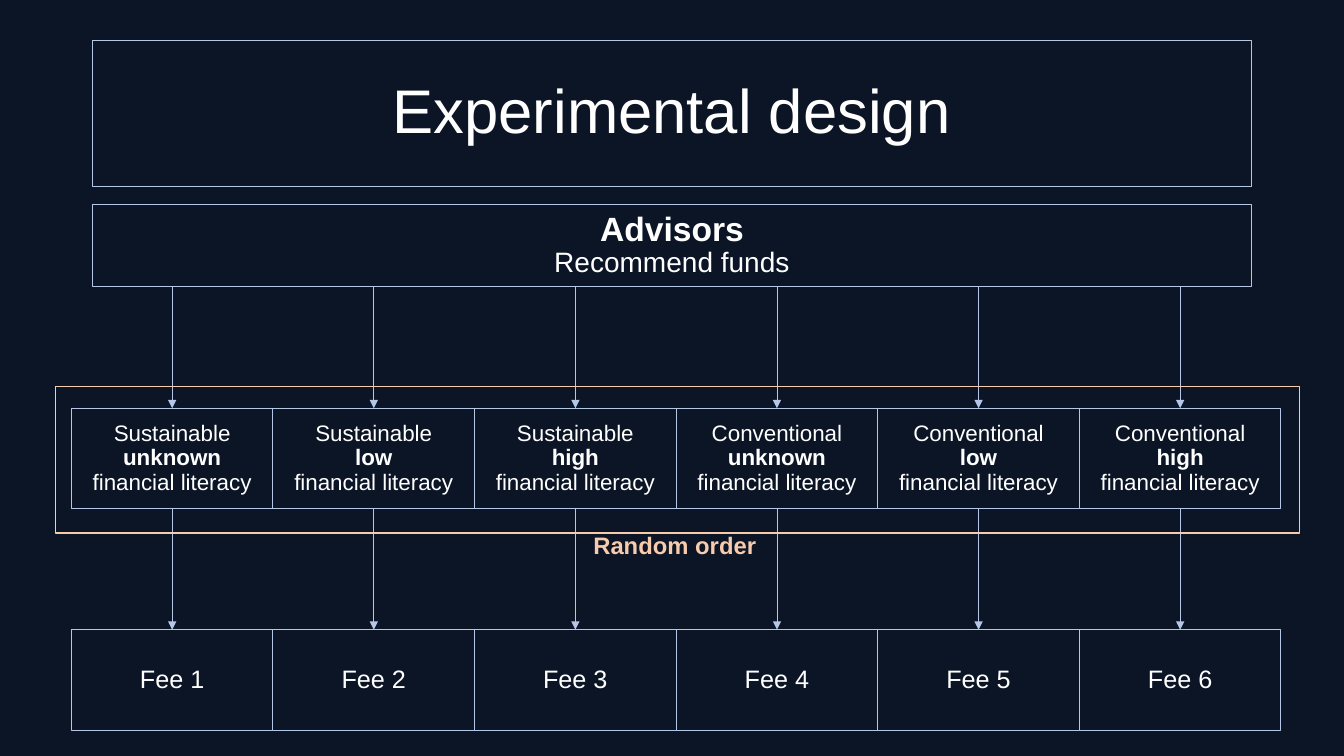
from dataclasses import dataclass

from lxml import etree
from pptx import Presentation
from pptx.dml.color import RGBColor
from pptx.enum.shapes import MSO_CONNECTOR, MSO_SHAPE
from pptx.enum.text import MSO_ANCHOR, MSO_AUTO_SIZE, PP_ALIGN
from pptx.oxml.ns import qn
from pptx.util import Pt

RECT = MSO_SHAPE.RECTANGLE
STRAIGHT = MSO_CONNECTOR.STRAIGHT
MIDDLE = MSO_ANCHOR.MIDDLE
CENTER = PP_ALIGN.CENTER
BOTTOM_SIDE, TOP_SIDE = 2, 0


@dataclass(frozen=True)
class Theme:
    font: str = "Arial"
    background: RGBColor = RGBColor(0x0C, 0x15, 0x26)
    text: RGBColor = RGBColor(0xFF, 0xFF, 0xFF)
    outline: RGBColor = RGBColor(0xB4, 0xC7, 0xE7)
    accent: RGBColor = RGBColor(0xF8, 0xCB, 0xAD)
    title: int = 44
    heading: int = 24
    subheading: int = 20
    fee: int = 18
    label: int = 17
    body: int = 16


T = Theme()


def write(sp, text, size, bold=False, color=T.text, spacing=0.9, first=True):
    """Write one centred paragraph, starting the text frame or adding to it."""
    tf = sp.text_frame
    tf.word_wrap = True
    p = tf.paragraphs[0] if first else tf.add_paragraph()
    p.alignment = CENTER
    p.line_spacing = spacing
    r = p.add_run()
    r.text = text
    r.font.name = T.font
    r.font.size = Pt(size)
    r.font.bold = bold
    r.font.color.rgb = color


def add_box(left, top, width, height, color=T.outline, weight=0.75):
    sp = slide.shapes.add_shape(RECT, Pt(left), Pt(top), Pt(width), Pt(height))
    sp.shadow.inherit = False
    sp.fill.background()
    sp.line.color.rgb = color
    sp.line.width = Pt(weight)
    sp.text_frame.vertical_anchor = MIDDLE
    return sp


prs = Presentation()
prs.slide_width, prs.slide_height = Pt(960), Pt(540)
slide = prs.slides.add_slide(prs.slide_layouts[5])
slide.background.fill.solid()
slide.background.fill.fore_color.rgb = T.background

# Title
title = slide.shapes.title
title.left, title.top = Pt(66), Pt(28.8)
title.width, title.height = Pt(828), Pt(104.4)
title.line.color.rgb = T.outline
title.line.width = Pt(0.75)
title.text_frame.auto_size = MSO_AUTO_SIZE.NONE
title.text_frame.vertical_anchor = MIDDLE
write(title, "Experimental design", T.title)

# Advisors
advisors = add_box(66, 146, 828, 59)
write(advisors, "Advisors", T.heading, bold=True)
write(advisors, "Recommend funds", T.subheading, first=False)

# Treatments and their fees, one column each
LEFT, COLUMN, ROW = 51, 144, 72
TREATMENT_TOP, FEE_TOP = 291.6, 449.8
treatments = [(fund, literacy) for fund in ("Sustainable", "Conventional")
              for literacy in ("unknown", "low", "high")]
arrows = []
for i, (fund, literacy) in enumerate(treatments):
    left = LEFT + i * COLUMN
    treatment = add_box(left, TREATMENT_TOP, COLUMN, ROW)
    write(treatment, fund, T.body)
    write(treatment, literacy, T.body, bold=True, first=False)
    write(treatment, "financial literacy", T.body, first=False)

    fee = add_box(left, FEE_TOP, COLUMN, ROW)
    write(fee, f"Fee {i + 1}", T.fee)

    x = Pt(left + COLUMN / 2)
    from_advisors = slide.shapes.add_connector(
        STRAIGHT, x, advisors.top + advisors.height, x, treatment.top)
    from_advisors.end_connect(treatment, TOP_SIDE)
    to_fee = slide.shapes.add_connector(
        STRAIGHT, x, treatment.top + treatment.height, x, fee.top)
    to_fee.begin_connect(treatment, BOTTOM_SIDE)
    to_fee.end_connect(fee, TOP_SIDE)
    arrows += [from_advisors, to_fee]

# Arrow format
for arrow in arrows:
    arrow.line.color.rgb = T.outline
    arrow.line.width = Pt(0.5)
    etree.SubElement(arrow.line._get_or_add_ln(), qn("a:tailEnd"), type="triangle")
    etree.SubElement(arrow._element.spPr, qn("a:effectLst"))

# Random order label and frame
label = slide.shapes.add_textbox(Pt(357), Pt(375.8), Pt(250), Pt(28))
write(label, "Random order", T.label, bold=True, color=T.accent, spacing=1.0)
add_box(39.6, 276.2, 888.5, 104.4, color=T.accent, weight=1)

prs.save("out.pptx")
